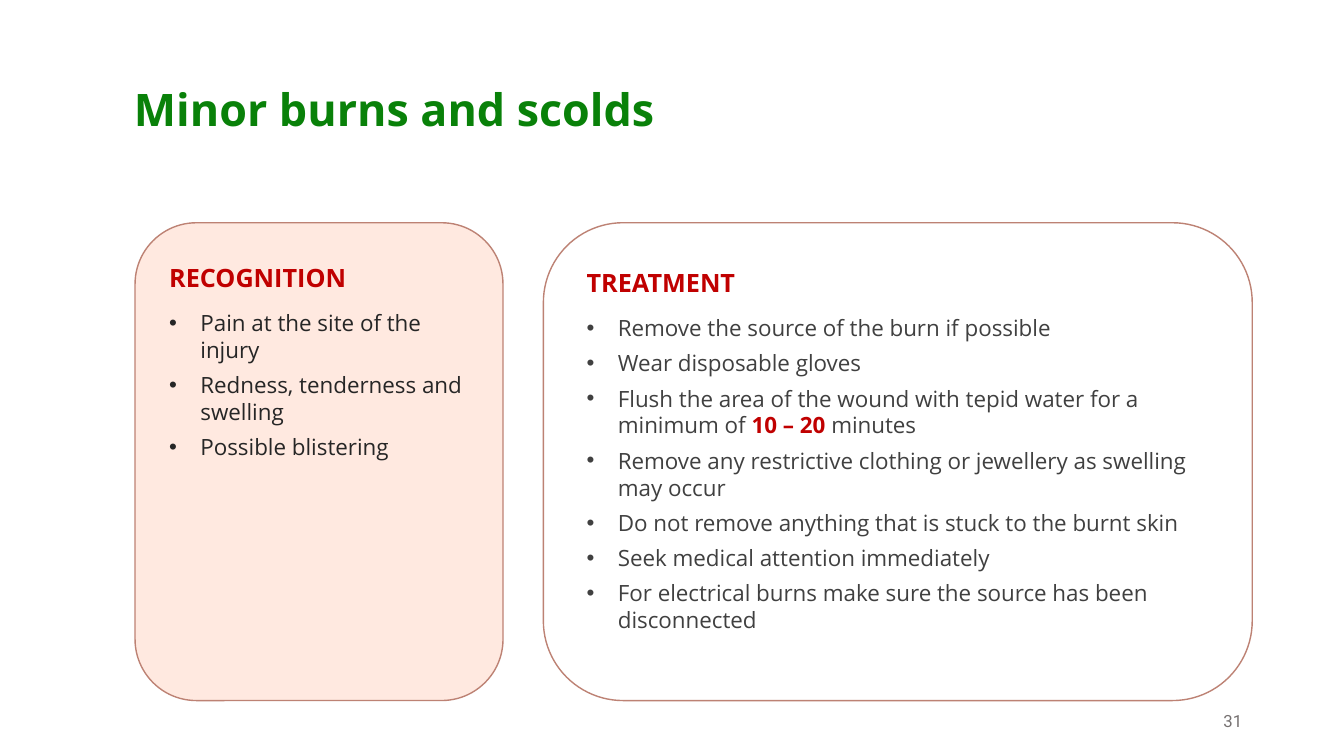
from lxml.etree import SubElement
from pptx import Presentation
from pptx.dml.color import RGBColor
from pptx.enum.shapes import MSO_SHAPE as Shape
from pptx.enum.text import MSO_ANCHOR as Anchor, PP_ALIGN as Align
from pptx.oxml.ns import qn
from pptx.util import Inches, Pt

RED = "C00000"
INDENT = Inches(0.31)

deck = Presentation()
deck.slide_width, deck.slide_height = Inches(13.33), Inches(7.5)
slide = deck.slides.add_slide(deck.slide_layouts[6])


def place(x, y, w, h):
    """Turn percentages of the slide's width and height into lengths."""
    wide, high = deck.slide_width / 100, deck.slide_height / 100
    return int(x * wide), int(y * high), int(w * wide), int(h * high)


def style(run, size, color, bold=False, face="Open Sans"):
    font = run.font
    font.name, font.size, font.bold = face, Pt(size), bold
    font.color.rgb = RGBColor.from_string(color)


title = slide.shapes.add_textbox(*place(9.23, 10.13, 44.33, 8.53)).text_frame
title.word_wrap = True
title.text = "Minor burns and scolds"
style(title.paragraphs[0].runs[0], 32, "098109", True)

# Card left and width, fill, text area, text colour, heading, points (* marks red)
cards = [
    (10.05, 27.38, "FFE9E0", (11.85, 34, 23.78, 27.6), "262626", "RECOGNITION", [
        "Pain at the site of the injury",
        "Redness, tenderness and swelling",
        "Possible blistering",
    ]),
    (40.43, 52.74, "FFFFFF", (42.91, 34.67, 47.71, 50), "404040", "TREATMENT", [
        "Remove the source of the burn if possible",
        "Wear disposable gloves",
        "Flush the area of the wound with tepid water for a minimum of "
        "*10 – 20 *minutes",
        "Remove any restrictive clothing or jewellery as swelling may occur",
        "Do not remove anything that is stuck to the burnt skin",
        "Seek medical attention immediately",
        "For electrical burns make sure the source has been disconnected",
    ]),
]

for left, width, fill, area, ink, head, points in cards:
    card = slide.shapes.add_shape(
        Shape.ROUNDED_RECTANGLE, *place(left, 29.47, width, 63.2))
    card.shadow.inherit = False
    card.fill.solid()
    card.fill.fore_color.rgb = RGBColor.from_string(fill)
    card.line.color.rgb = RGBColor.from_string("BD8274")
    card.line.width = Pt(1)

    body = slide.shapes.add_textbox(*place(*area)).text_frame
    body.word_wrap = True
    body.text = head
    body.paragraphs[0].space_after = Pt(12)
    style(body.paragraphs[0].runs[0], 18, RED, True)
    for point in points:
        para = body.add_paragraph()
        para.space_after = Pt(6)
        props = para._p.get_or_add_pPr()
        props.set("marL", str(INDENT))
        props.set("indent", str(-INDENT))
        SubElement(props, qn("a:buFont"), typeface="Arial")
        SubElement(props, qn("a:buChar"), char="•")
        for i, part in enumerate(point.split("*")):
            run = para.add_run()
            run.text = part
            key = i % 2 == 1
            style(run, 16, RED if key else ink, key)

page = slide.shapes.add_textbox(*place(70.67, 92.67, 22.5, 5.33)).text_frame
page.word_wrap = True
page.vertical_anchor = Anchor.MIDDLE
page.text = "31"
page.paragraphs[0].alignment = Align.RIGHT
style(page.paragraphs[0].runs[0], 12, "767171", face="Roboto")

deck.save("out.pptx")
